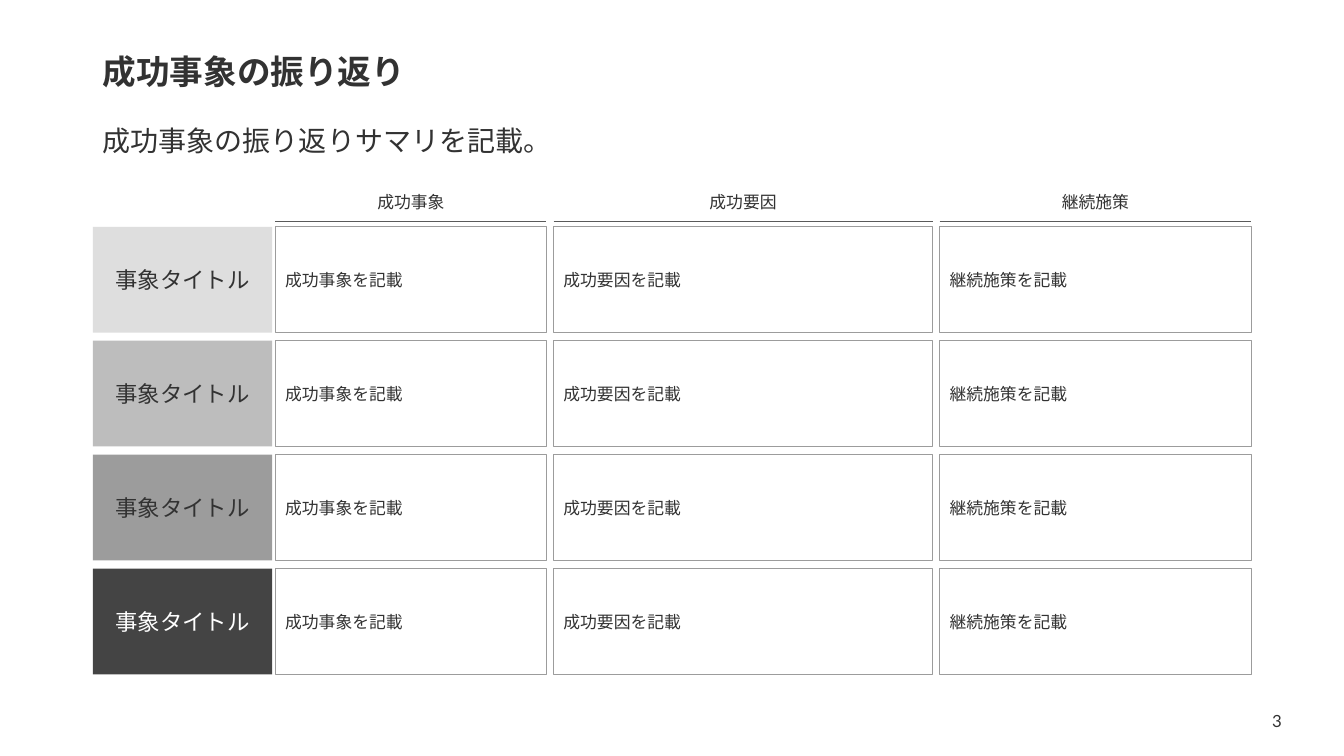
from dataclasses import dataclass

from lxml import etree
from pptx import Presentation
from pptx.dml.color import RGBColor
from pptx.enum import lang, shapes, text
from pptx.oxml import ns
from pptx.util import Inches, Pt

FONT, INK, WHITE = "Lato", "323232", "FFFFFF"
EDGE, RULE = "9C9C9C", "5A5A5A"
LEFT, WIDE = 0.92, 11.5            # content margin and width
TOP, HIGH, STEP = 2.25, 1.05, 1.13  # first row, row height, row pitch
HEAD, BAR = 1.85, 2.2              # header text and header rule


@dataclass
class Box:
    x: float
    y: float
    w: float
    h: float

    def emu(self) -> list:
        return [Inches(v) for v in (self.x, self.y, self.w, self.h)]


@dataclass
class Style:
    size: int
    color: str = INK
    bold: bool = False
    align: text.PP_ALIGN = text.PP_ALIGN.LEFT
    spacing: float = 1.0
    before: int = 0


@dataclass
class Column:
    name: str
    width: float
    gap: float  # space to the left


@dataclass
class Row:
    fill: str
    ink: str = INK


COLS = [
    Column("成功事象", 2.69, 0.03),
    Column("成功要因", 3.76, 0.07),
    Column("継続施策", 3.09, 0.07),
]
ROWS = [Row("DEDEDE"), Row("BDBDBD"), Row("9C9C9C"), Row("444444", WHITE)]
LABEL = 1.78  # width of the row titles

MID = text.PP_ALIGN.CENTER
CELL = Style(12)
CENTER = Style(12, align=MID)


def rgb(code: str) -> RGBColor:
    return RGBColor.from_string(code)


def write(shape, words: str, style: Style) -> None:
    frame = shape.text_frame
    frame.word_wrap = True
    frame.vertical_anchor = text.MSO_ANCHOR.MIDDLE
    para = frame.paragraphs[0]
    layout = {"alignment": style.align, "line_spacing": style.spacing,
              "space_before": Pt(style.before)}
    for key, value in layout.items():
        setattr(para, key, value)
    run = para.add_run()
    run.text = words
    look = {"name": FONT, "size": Pt(style.size), "bold": style.bold,
            "language_id": lang.MSO_LANGUAGE_ID.JAPANESE}
    for key, value in look.items():
        setattr(run.font, key, value)
    run.font.color.rgb = rgb(style.color)
    # East Asian typeface
    etree.SubElement(run.font._element, ns.qn("a:ea"), typeface=FONT)


def label(parent, box: Box, words: str, style: Style) -> None:
    write(parent.add_textbox(*box.emu()), words, style)


def block(parent, box: Box, words: str, style: Style,
          fill: str = "", line: str = "") -> None:
    shape = parent.add_shape(shapes.MSO_SHAPE.RECTANGLE, *box.emu())
    shape.shadow.inherit = False
    if fill:
        shape.fill.solid()
        shape.fill.fore_color.rgb = rgb(fill)
    else:
        shape.fill.background()
    if line:
        shape.line.color.rgb = rgb(line)
        shape.line.width = Pt(0.5)
    else:
        shape.line.fill.background()
    write(shape, words, style)


def header(parent, x: float, col: Column) -> None:
    group = parent.add_group_shape().shapes
    ends = [Inches(v) for v in (x, BAR, x + col.width, BAR)]
    rule = group.add_connector(shapes.MSO_CONNECTOR.STRAIGHT, *ends)
    rule.line.color.rgb = rgb(RULE)
    rule.line.width = Pt(0.5)
    etree.SubElement(rule._element.spPr, ns.qn("a:effectLst"))
    label(group, Box(x, HEAD, col.width, 0.3), col.name, CENTER)


def main() -> None:
    deck = Presentation()
    deck.slide_width, deck.slide_height = Inches(13.33), Inches(7.5)
    tree = deck.slides.add_slide(deck.slide_layouts[6]).shapes

    # Title, summary and page number
    label(tree, Box(LEFT, 0.4, WIDE, 0.67), "成功事象の振り返り",
          Style(24, bold=True, spacing=0.9))
    label(tree, Box(LEFT, 1.08, WIDE, 0.67),
          "成功事象の振り返りサマリを記載。",
          Style(20, spacing=0.9, before=10))
    label(tree, Box(LEFT + WIDE, 6.95, 0.49, 0.4), "3", CENTER)

    # Row titles
    tops = [TOP + i * STEP for i in range(len(ROWS))]
    for y, row in zip(tops, ROWS):
        block(tree, Box(LEFT, y, LABEL, HIGH), "事象タイトル",
              Style(16, row.ink, align=MID), fill=row.fill)

    # Columns: header, then one cell per row
    x = LEFT + LABEL
    for col in COLS:
        x += col.gap
        header(tree, x, col)
        for y in tops:
            block(tree, Box(x, y, col.width, HIGH), f"{col.name}を記載",
                  CELL, line=EDGE)
        x += col.width

    deck.save("out.pptx")


if __name__ == "__main__":
    main()
